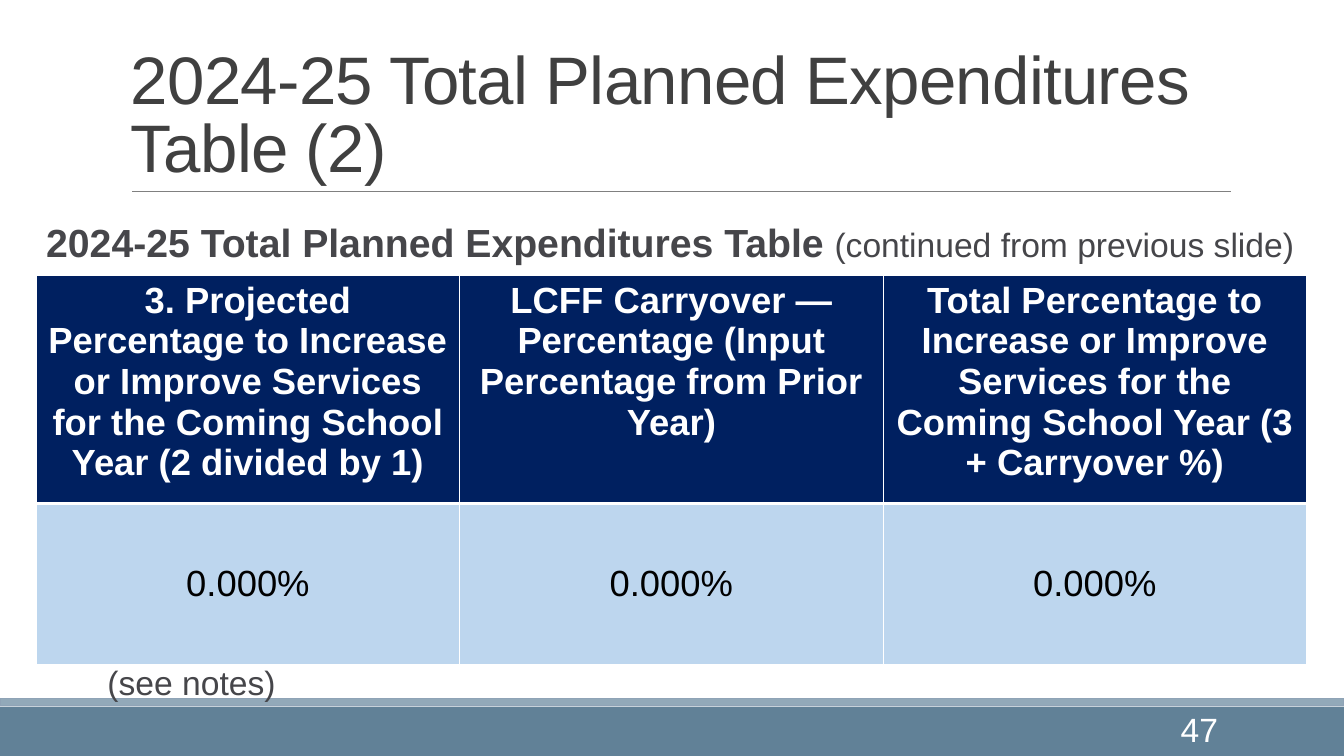
from dataclasses import dataclass

import pptx
import pptx.dml.color
import pptx.enum.shapes
import pptx.enum.text
import pptx.oxml
import pptx.oxml.ns
import pptx.slide
import pptx.table
import pptx.text.text
import pptx.util

PX = 9144  # EMU per px, 100 px to the inch
ALIGN = pptx.enum.text.PP_ALIGN
ANCHOR = pptx.enum.text.MSO_ANCHOR


@dataclass(frozen=True)
class Theme:
    font: str = "Arial"
    title: str = "404040"
    body: str = "46464A"
    white: str = "FFFFFF"
    black: str = "000000"
    footer: str = "618197"
    footer_edge: str = "92A9B9"
    footer_outline: str = "8FA3B6"
    rule: str = "808080"
    header_fill: str = "002060"
    value_fill: str = "BDD6EE"
    title_size: int = 48
    heading_size: int = 28
    table_size: int = 26
    note_size: int = 24


@dataclass(frozen=True)
class Box:
    left: int
    top: int
    width: int
    height: int

    def emu(self) -> list[int]:
        return [px(n) for n in (self.left, self.top, self.width, self.height)]


@dataclass(frozen=True)
class Band:
    box: Box
    fill: str
    outline: str | None = None


@dataclass(frozen=True)
class TableRow:
    texts: tuple[str, ...]
    height: int
    fill: str
    color: str
    bold: bool
    anchor: ANCHOR
    bottom_border: int


THEME = Theme()


def px(length: int) -> int:
    return pptx.util.Emu(length * PX)


def rgb(color: str) -> pptx.dml.color.RGBColor:
    return pptx.dml.color.RGBColor.from_string(color)


def write(paragraph: pptx.text.text._Paragraph, text: str, *, size: int, color: str,
          bold: bool = False, tracking: int = 0) -> None:
    run = paragraph.add_run()
    run.text = text
    run.font.name = THEME.font
    run.font.size = pptx.util.Pt(size)
    run.font.bold = bold
    run.font.color.rgb = rgb(color)
    if tracking:
        run.font._element.set("spc", str(tracking))


def add_text_box(slide: pptx.slide.Slide, box: Box, *, anchor: ANCHOR = ANCHOR.MIDDLE,
                 align: ALIGN = ALIGN.LEFT, line_spacing: float = 1.0,
                 space_after: int = 0) -> pptx.text.text._Paragraph:
    frame = slide.shapes.add_textbox(*box.emu()).text_frame
    frame.word_wrap = True
    frame.vertical_anchor = anchor
    paragraph = frame.paragraphs[0]
    paragraph.alignment = align
    paragraph.line_spacing = line_spacing
    paragraph.space_after = pptx.util.Pt(space_after)
    return paragraph


def add_band(slide: pptx.slide.Slide, band: Band) -> None:
    shape = slide.shapes.add_shape(pptx.enum.shapes.MSO_SHAPE.RECTANGLE, *band.box.emu())
    shape.shadow.inherit = False
    shape.fill.solid()
    shape.fill.fore_color.rgb = rgb(band.fill)
    if band.outline:
        shape.line.color.rgb = rgb(band.outline)
        shape.line.width = pptx.util.Pt(1.25)
    else:
        shape.line.fill.background()


def add_rule(slide: pptx.slide.Slide, left: int, right: int, top: int) -> None:
    rule = slide.shapes.add_connector(pptx.enum.shapes.MSO_CONNECTOR.STRAIGHT,
                                      px(left), px(top), px(right), px(top))
    rule.line.color.rgb = rgb(THEME.rule)
    rule.line.width = pptx.util.Pt(0.5)
    rule._element.spPr.append(pptx.oxml.parse_xml(
        f'<a:effectLst {pptx.oxml.ns.nsdecls("a")}/>'))


def set_borders(cell: pptx.table._Cell, bottom: int) -> None:
    properties = cell._tc.get_or_add_tcPr()
    for side, points in {"L": 1, "R": 1, "T": 1, "B": bottom}.items():
        properties.append(pptx.oxml.parse_xml(
            f'<a:ln{side} {pptx.oxml.ns.nsdecls("a")} w="{pptx.util.Pt(points)}">'
            f'<a:solidFill><a:srgbClr val="{THEME.white}"/></a:solidFill></a:ln{side}>'))


def add_expenditures(slide: pptx.slide.Slide, box: Box, rows: tuple[TableRow, ...]) -> None:
    columns = len(rows[0].texts)
    table = slide.shapes.add_table(len(rows), columns, *box.emu()).table
    table.horz_banding = False
    for column in table.columns:
        column.width = px(box.width // columns)
    for index, row in enumerate(rows):
        table.rows[index].height = px(row.height)
        for cell, text in zip(table.rows[index].cells, row.texts):
            set_borders(cell, row.bottom_border)
            cell.fill.solid()
            cell.fill.fore_color.rgb = rgb(row.fill)
            cell.vertical_anchor = row.anchor
            paragraph = cell.text_frame.paragraphs[0]
            paragraph.alignment = ALIGN.CENTER
            write(paragraph, text, size=THEME.table_size, color=row.color, bold=row.bold)


FOOTER = (
    Band(Box(0, 701, 1333, 50), THEME.footer),
    Band(Box(0, 693, 1333, 7), THEME.footer_edge, THEME.footer_outline),
)
ROWS = (
    TableRow(("3. Projected Percentage to Increase or Improve Services for the Coming "
              "School Year (2 divided by 1)",
              "LCFF Carryover — Percentage (Input Percentage from Prior Year)",
              "Total Percentage to Increase or Improve Services for the Coming "
              "School Year (3 + Carryover %)"),
             206, THEME.header_fill, THEME.white, True, ANCHOR.TOP, 3),
    TableRow(("0.000%",) * 3, 160, THEME.value_fill, THEME.black, False, ANCHOR.MIDDLE, 1),
)


def main() -> None:
    deck = pptx.Presentation()
    deck.slide_width, deck.slide_height = px(1333), px(750)
    slide = deck.slides.add_slide(deck.slide_layouts[6])

    # Footer bands and title rule
    for band in FOOTER:
        add_band(slide, band)
    add_rule(slide, 131, 1221, 190)

    # Title
    title = add_text_box(slide, Box(120, 31, 1100, 159), anchor=ANCHOR.BOTTOM,
                         line_spacing=0.85)
    write(title, "2024-25 Total Planned Expenditures Table (2)",
          size=THEME.title_size, color=THEME.title, tracking=-50)

    # Table heading
    heading = add_text_box(slide, Box(36, 202, 1273, 81), line_spacing=0.9, space_after=2)
    write(heading, "2024-25 Total Planned Expenditures Table ",
          size=THEME.heading_size, color=THEME.body, bold=True)
    write(heading, "(continued from previous slide)", size=THEME.note_size, color=THEME.body)

    # Expenditures table
    add_expenditures(slide, Box(36, 273, 1260, 366), ROWS)

    # Note and slide number
    note = add_text_box(slide, Box(25, 639, 330, 81), align=ALIGN.CENTER,
                        line_spacing=0.9, space_after=2)
    write(note, "(see notes)", size=THEME.note_size, color=THEME.body)
    number = add_text_box(slide, Box(1075, 703, 143, 40), align=ALIGN.RIGHT)
    write(number, "47", size=THEME.note_size, color=THEME.white)

    deck.save("out.pptx")


if __name__ == "__main__":
    main()
